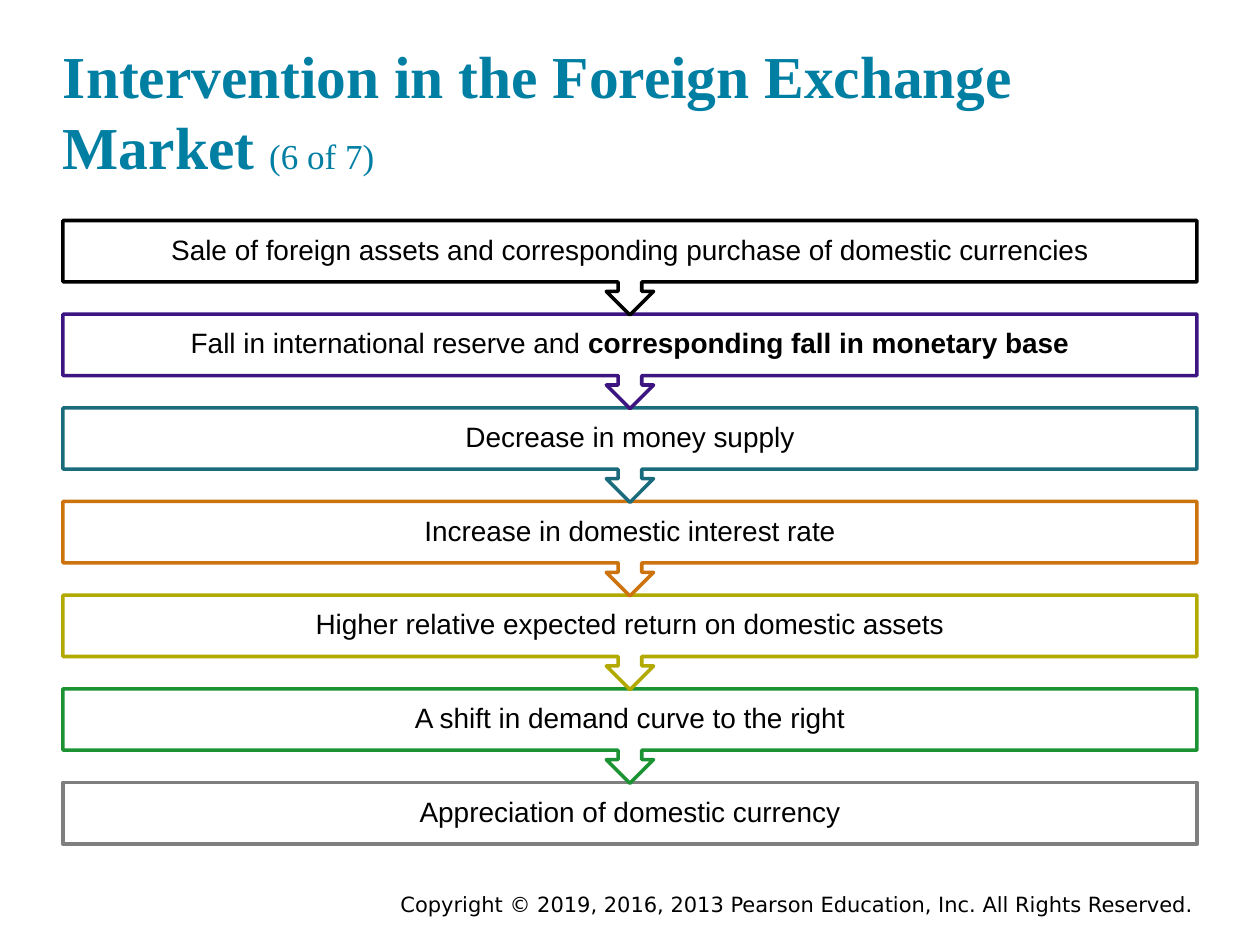
from pptx import Presentation
from pptx.dml.color import RGBColor
from pptx.enum.shapes import MSO_SHAPE
from pptx.enum.text import MSO_ANCHOR, PP_ALIGN
from pptx.util import Inches, Pt

RECT, CALLOUT = MSO_SHAPE.RECTANGLE, MSO_SHAPE.DOWN_ARROW_CALLOUT
MIDDLE, BOTTOM = MSO_ANCHOR.MIDDLE, MSO_ANCHOR.BOTTOM
LEFT, CENTER = PP_ALIGN.LEFT, PP_ALIGN.CENTER


def color(code):
    return RGBColor.from_string(code)


def write(shape, runs, align, inset, **form):
    """Fill a shape with one paragraph of (text, size, bold, font, color) runs."""
    frame = shape.text_frame
    form["word_wrap"] = True
    for side in ("left", "top", "right", "bottom"):
        form["margin_" + side] = Inches(inset)
    for name, value in form.items():
        setattr(frame, name, value)
    para = frame.paragraphs[0]
    para.alignment = align
    for text, size, bold, face, tint in runs:
        run = para.add_run()
        run.text = text
        look = {"size": Pt(size), "bold": bold, "name": face}
        for name, value in look.items():
            setattr(run.font, name, value)
        run.font.color.rgb = color(tint)
    return para


deck = Presentation()
deck.slide_width, deck.slide_height = Inches(10), Inches(7.5)
slide = deck.slides.add_slide(deck.slide_layouts[6])
shapes = slide.shapes

# Copyright line
foot = shapes.add_textbox(Inches(2.95), Inches(7.03), Inches(6.75), Inches(0.3))
note = "Copyright © 2019, 2016, 2013 Pearson Education, Inc. All Rights Reserved."
write(foot, [(note, 12, False, "DejaVu Sans", "000000")], CENTER, 0.05)

# Title
title = shapes.add_textbox(Inches(0.5), Inches(0.24), Inches(9), Inches(1.2))
heads = [("Intervention in the Foreign Exchange Market ", 34, True),
         ("(6 of 7)", 20, False)]
write(title, [(*head, "Times New Roman", "007FA3") for head in heads],
      LEFT, 0, vertical_anchor=BOTTOM)

# Chain of steps: line color, plain text, bold text
steps = [
    ("000000", "Sale of foreign assets and corresponding purchase of domestic currencies", ""),
    ("3C1581", "Fall in international reserve and ", "corresponding fall in monetary base"),
    ("1A6C7C", "Decrease in money supply", ""),
    ("CC730D", "Increase in domestic interest rate", ""),
    ("B2AA00", "Higher relative expected return on domestic assets", ""),
    ("1B9332", "A shift in demand curve to the right", ""),
    ("7F7F7F", "Appreciation of domestic currency", ""),
]
top, pitch = 1.75, 4.46 / 6
last = len(steps) - 1

# Drawn from the bottom up, so each arrow tip lies over the next box
for i in range(last, -1, -1):
    tint, plain, strong = steps[i]
    kind, height = (RECT, 0.49) if i == last else (CALLOUT, 0.75)
    box = shapes.add_shape(kind, Inches(0.5), Inches(top + i * pitch),
                           Inches(9), Inches(height))
    box.shadow.inherit = False
    box.fill.solid()
    box.fill.fore_color.rgb = color("FFFFFF")
    box.line.color.rgb = color(tint)
    box.line.width = Pt(2)
    parts = [(text, 16, bold, "Arial", "000000")
             for text, bold in ((plain, False), (strong, True)) if text]
    para = write(box, parts, CENTER, 0.12, vertical_anchor=MIDDLE)
    para.line_spacing = 0.9

deck.save("out.pptx")
